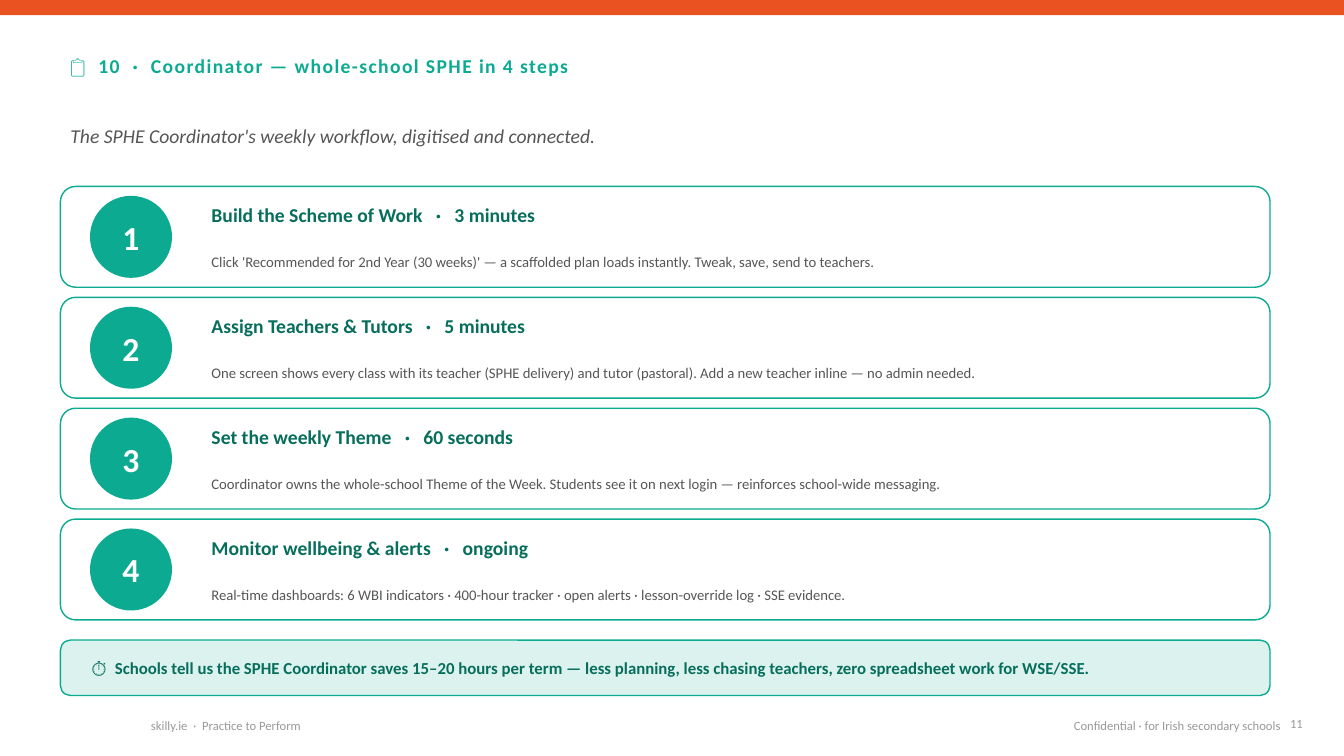
from pptx import Presentation
from pptx.dml.color import RGBColor
from pptx.enum.shapes import MSO_SHAPE
from pptx.enum.text import MSO_ANCHOR, PP_ALIGN
from pptx.util import Pt

RECT, ROUND, OVAL = MSO_SHAPE.RECTANGLE, MSO_SHAPE.ROUNDED_RECTANGLE, MSO_SHAPE.OVAL
LEFT, CENTER, RIGHT = PP_ALIGN.LEFT, PP_ALIGN.CENTER, PP_ALIGN.RIGHT
TOP, MIDDLE = MSO_ANCHOR.TOP, MSO_ANCHOR.MIDDLE

FONT = "Calibri"
COLORS = {
    "orange": "EA5321",
    "teal": "0CAB91",
    "dark": "076E5C",
    "mint": "DBF2EF",
    "text": "555656",
    "muted": "999999",
    "white": "FFFFFF",
}

STEPS = [
    ("Build the Scheme of Work   ·   3 minutes",
     "Click 'Recommended for 2nd Year (30 weeks)' — a scaffolded plan loads instantly. "
     "Tweak, save, send to teachers."),
    ("Assign Teachers & Tutors   ·   5 minutes",
     "One screen shows every class with its teacher (SPHE delivery) and tutor (pastoral). "
     "Add a new teacher inline — no admin needed."),
    ("Set the weekly Theme   ·   60 seconds",
     "Coordinator owns the whole-school Theme of the Week. "
     "Students see it on next login — reinforces school-wide messaging."),
    ("Monitor wellbeing & alerts   ·   ongoing",
     "Real-time dashboards: 6 WBI indicators · 400-hour tracker · open alerts · "
     "lesson-override log · SSE evidence."),
]


def rgb(name):
    return RGBColor.from_string(COLORS[name])


def write(tf, text, size, color, bold=False, italic=False, align=LEFT,
          anchor=MIDDLE, line_spacing=None, tracking=None):
    tf.word_wrap = True
    tf.vertical_anchor = anchor
    p = tf.paragraphs[0]
    p.alignment = align
    if line_spacing:
        p.line_spacing = line_spacing
    r = p.add_run()
    r.text = text
    r.font.name = FONT
    r.font.size = Pt(size)
    r.font.bold = bold
    r.font.italic = italic
    r.font.color.rgb = rgb(color)
    if tracking:
        r.font._element.set("spc", str(tracking))


def add_text(s, x, y, w, h, text, size, color, **style):
    box = s.shapes.add_textbox(Pt(x), Pt(y), Pt(w), Pt(h))
    write(box.text_frame, text, size, color, **style)


def add_box(s, kind, x, y, w, h, fill, line=None, radius=None):
    sp = s.shapes.add_shape(kind, Pt(x), Pt(y), Pt(w), Pt(h))
    sp.shadow.inherit = False
    sp.fill.solid()
    sp.fill.fore_color.rgb = rgb(fill)
    if line:
        sp.line.color.rgb = rgb(line)
        sp.line.width = Pt(1)
    else:
        sp.line.fill.background()
    if radius:
        sp.adjustments[0] = radius / min(w, h)
    return sp


def add_header(s, x, y, w):
    add_text(s, x, y, w, 36, "📋  10  ·  Coordinator — whole-school SPHE in 4 steps",
             14, "teal", bold=True, tracking=100)
    add_text(s, x, y + 50.4, w, 36,
             "The SPHE Coordinator's weekly workflow, digitised and connected.",
             14, "text", italic=True)


def add_step(s, x, y, w, h, number, title, detail):
    add_box(s, ROUND, x, y, w, h, "white", "teal", radius=10.8)
    d = h - 14.4
    badge = add_box(s, OVAL, x + 21.6, y + 7.2, d, d, "teal", "teal")
    write(badge.text_frame, str(number), 24, "white", bold=True, align=CENTER)
    text_x, text_w = x + 100.8, w - 144
    add_text(s, text_x, y + 5.76, text_w, 28.8, title, 14, "dark", bold=True)
    add_text(s, text_x, y + 34.56, text_w, 36, detail, 10.5, "text", line_spacing=1.2)


def add_callout(s, x, y, w, h):
    add_box(s, ROUND, x, y, w, h, "mint", "teal", radius=7.2)
    add_text(s, x + 14.4, y, w - 21.6, h,
             "⏱  Schools tell us the SPHE Coordinator saves 15–20 hours per term — "
             "less planning, less chasing teachers, zero spreadsheet work for WSE/SSE.",
             12, "dark", bold=True)


def add_footer(s, y, h):
    add_text(s, 100.8, y, 504, h, "skilly.ie  ·  Practice to Perform", 9, "muted")
    add_text(s, 604.8, y, 316.8, h, "Confidential · for Irish secondary schools",
             9, "muted", align=RIGHT)
    add_text(s, 914.4, y, 36, h, "11", 9, "muted", anchor=TOP)


def main():
    prs = Presentation()
    prs.slide_width, prs.slide_height = Pt(960), Pt(540)
    s = prs.slides.add_slide(prs.slide_layouts[6])
    x, w = 43.2, 864
    add_box(s, RECT, 0, 0, 960, 10.8, "orange")
    add_header(s, x, 28.8, w)
    step_h, gap = 72, 7.2
    for i, (title, detail) in enumerate(STEPS):
        add_step(s, x, 133.2 + i * (step_h + gap), w, step_h, i + 1, title, detail)
    add_callout(s, x, 457.2, w, 39.6)
    add_footer(s, 507.6, 21.6)
    prs.save("out.pptx")


if __name__ == "__main__":
    main()
